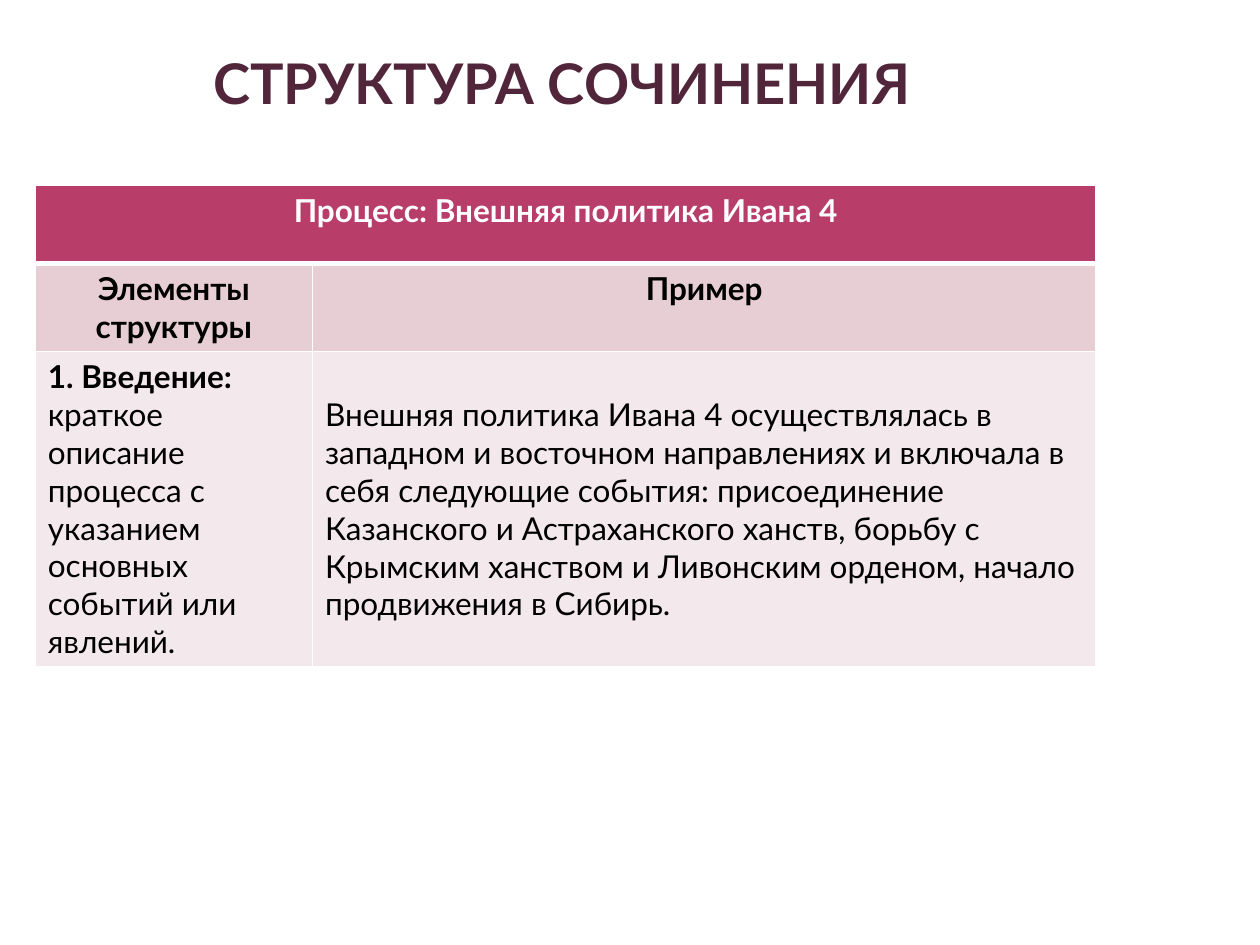
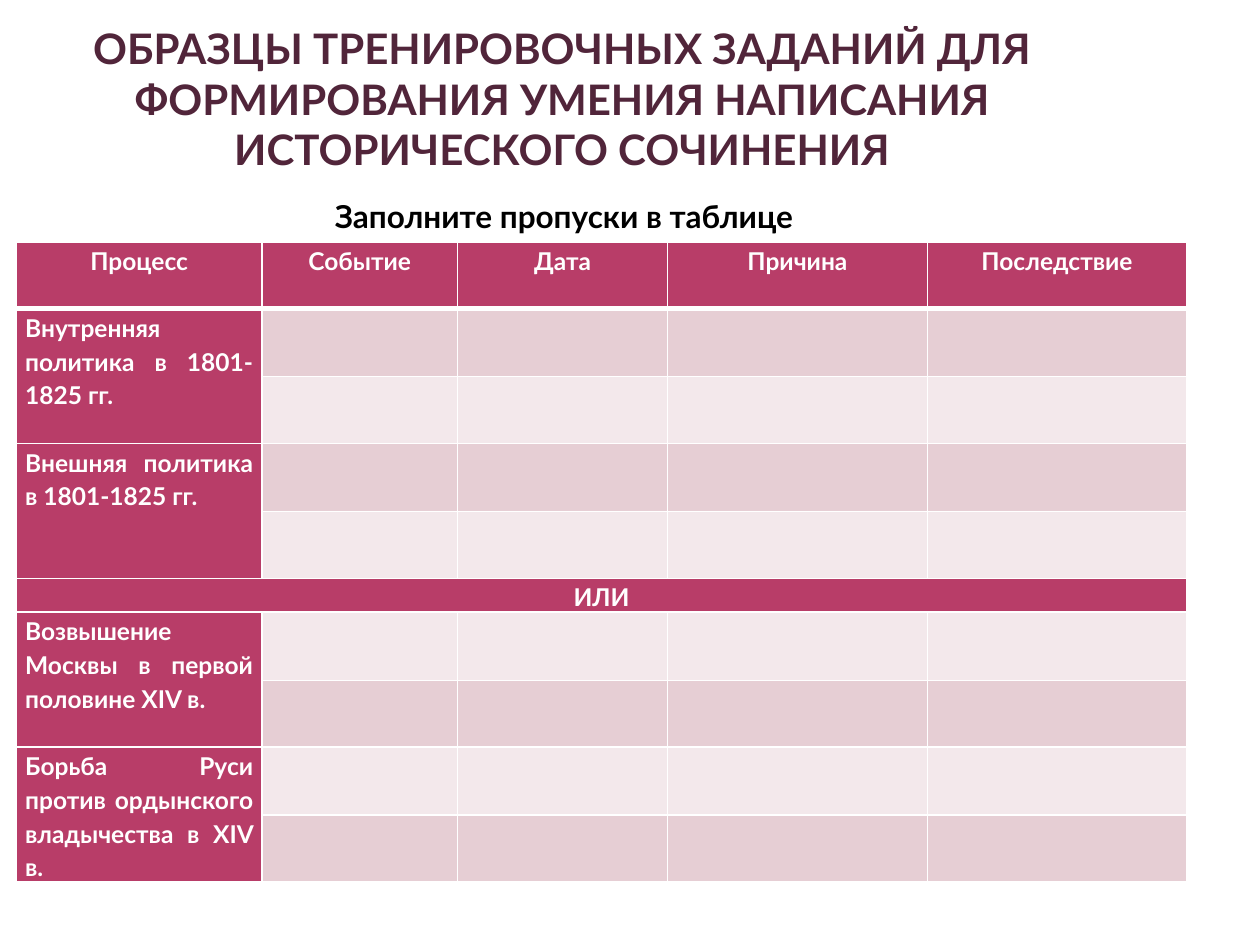
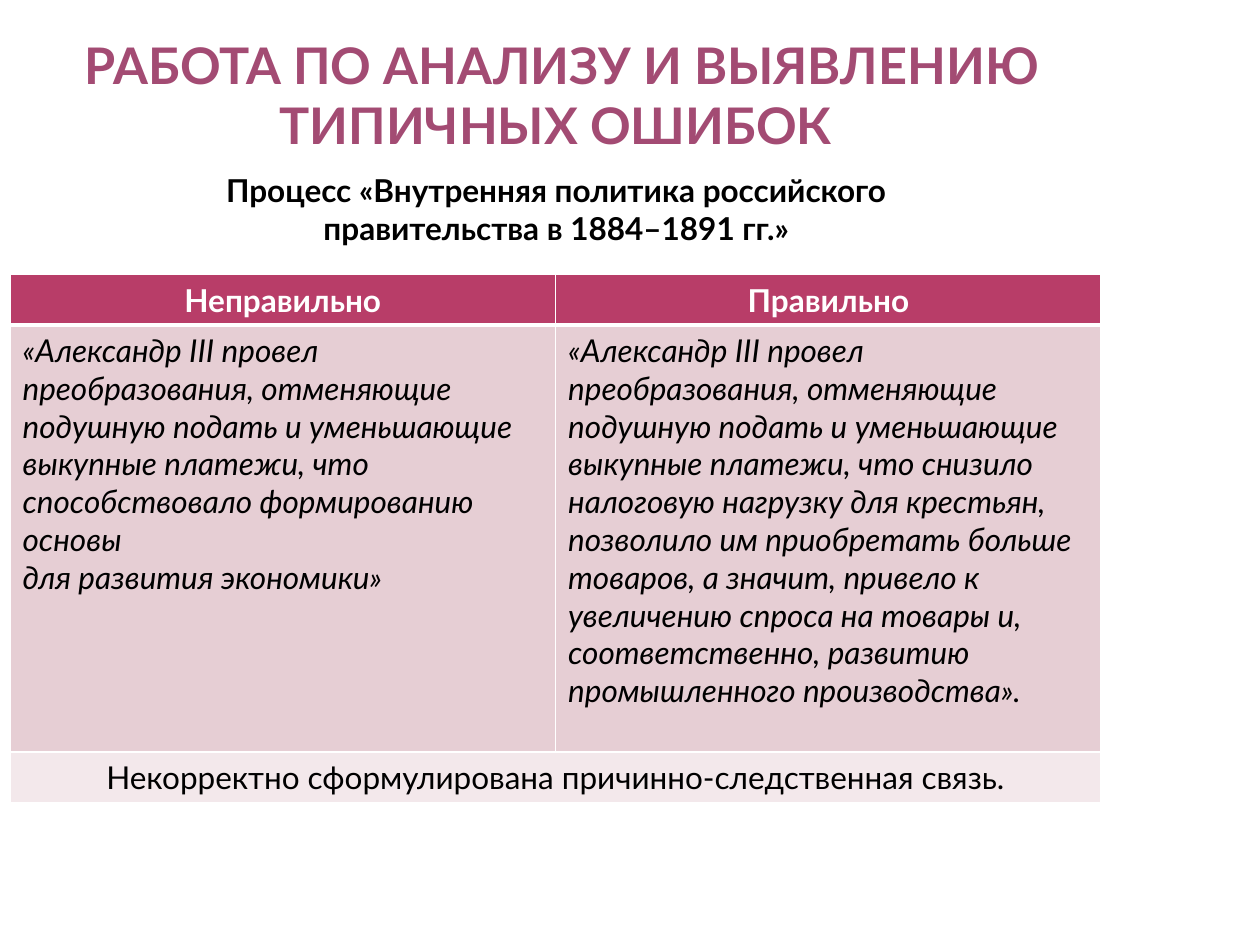
from lxml import etree
from pptx import Presentation as Deck
from pptx.dml.color import RGBColor as Rgb
from pptx.enum.text import MSO_ANCHOR as Anchor, PP_ALIGN as Align
from pptx.oxml.ns import qn
from pptx.util import Inches, Pt

HUE = {
    "plum": "51253A",
    "mauve": "A34B73",
    "head": "B83D68",
    "dark": "E6CED4",
    "light": "F3E8EB",
    "white": "FFFFFF",
    "black": "000000",
}
FONT = "Lato"


def color(name):
    return Rgb.from_string(HUE[name])


def write(frame, text, size=18, hue="black", bold=False, slant=False,
          align=Align.LEFT, space=None, tail=""):
    para = frame.paragraphs[0]
    para.text = text
    para.alignment = align
    if space:
        para.line_spacing = space
    if tail:
        para.add_run().text = tail
    for run in para.runs:
        font = run.font
        font.name, font.size = FONT, Pt(size)
        font.bold, font.italic = bold, slant
        font.color.rgb = color(hue)
    if tail:
        para.runs[-1].font.bold = False


def label(slide, box, text, **style):
    frame = slide.shapes.add_textbox(*map(Inches, box)).text_frame
    frame.word_wrap = True
    write(frame, text, bold=True, **style)
    return frame


def title(slide, box, text, size, hue="plum"):
    frame = label(slide, box, text, size=size, hue=hue, align=Align.CENTER)
    frame.vertical_anchor = Anchor.BOTTOM
    frame.margin_left = frame.margin_right = Inches(0.05)
    frame.margin_top = frame.margin_bottom = 0


def paint(cell, hue):
    cell.fill.solid()
    cell.fill.fore_color.rgb = color(hue)


def edge(cell, row):
    props = cell._tc.get_or_add_tcPr()
    thick = {(0, "B"), (1, "T")}
    for spot, side in enumerate("LRTB"):
        line = etree.Element(qn(f"a:ln{side}"))
        line.set("w", str(Pt(3 if (row, side) in thick else 1)))
        fill = etree.SubElement(line, qn("a:solidFill"))
        etree.SubElement(fill, qn("a:srgbClr")).set("val", HUE["white"])
        props.insert(spot, line)


def grid(slide, box, cols, rows):
    left, top = box
    size = left, top, sum(cols), sum(rows)
    table = slide.shapes.add_table(
        len(rows), len(cols), *map(Inches, size)).table
    for col, width in zip(table.columns, cols):
        col.width = Inches(width)
    for row, height in zip(table.rows, rows):
        row.height = Inches(height)
    for row in range(len(rows)):
        for col in range(len(cols)):
            cell = table.cell(row, col)
            paint(cell, "head" if row == 0 else "dark" if row % 2 else "light")
            edge(cell, row)
    return table


def join(table, first, last):
    table.cell(*first).merge(table.cell(*last))


def plan(slide, box):
    table = grid(slide, box, [2.2, 6.22], [0.62, 0.7, 2.5])
    join(table, (0, 0), (0, 1))
    write(table.cell(0, 0).text_frame, "Процесс: Внешняя политика Ивана 4",
          hue="white", bold=True, align=Align.CENTER)
    for col, text in enumerate(["Элементы структуры", "Пример"]):
        write(table.cell(1, col).text_frame, text,
              bold=True, align=Align.CENTER)
    write(table.cell(2, 0).text_frame, "1. Введение: ", bold=True,
          tail="краткое описание процесса с указанием основных событий "
               "или явлений.")
    sample = table.cell(2, 1)
    sample.vertical_anchor = Anchor.MIDDLE
    write(sample.text_frame,
          "Внешняя политика Ивана 4 осуществлялась в западном и восточном "
          "направлениях и включала в себя следующие события: присоединение "
          "Казанского и Астраханского ханств, борьбу с Крымским ханством и "
          "Ливонским орденом, начало продвижения в Сибирь.")


def drill(slide, box):
    pair = [0.54, 0.53]
    rows = [0.53] + pair * 2 + [0.27] + pair * 2
    table = grid(slide, box, [1.95, 1.55, 1.67, 2.06, 2.06], rows)

    def fill(row, col, text, align):
        cell = table.cell(row, col)
        paint(cell, "head")
        cell.margin_left = cell.margin_right = Inches(0.07)
        cell.margin_top = cell.margin_bottom = 0
        write(cell.text_frame, text, size=14, hue="white", bold=True,
              align=align, space=1.15)

    heads = ["Процесс", "Событие", "Дата", "Причина", "Последствие"]
    for col, text in enumerate(heads):
        fill(0, col, text, Align.CENTER)
    topics = {
        1: "Внутренняя политика в 1801-1825 гг.",
        3: "Внешняя политика в 1801-1825 гг.",
        6: "Возвышение Москвы в первой половине XIV в.",
        8: "Борьба Руси против ордынского владычества в XIV в.",
    }
    for row, text in topics.items():
        join(table, (row, 0), (row + 1, 0))
        fill(row, 0, text, Align.JUSTIFY)
    join(table, (5, 0), (5, 4))
    fill(5, 0, "ИЛИ", Align.CENTER)


def errors(slide, box):
    table = grid(slide, box, [4.33, 4.33], [0.4, 3.39, 0.4])
    start = ("«Александр III провел преобразования, отменяющие подушную "
             "подать и уменьшающие выкупные платежи, что ")
    pairs = [
        ("Неправильно",
         "способствовало формированию основы\vдля развития экономики»"),
        ("Правильно",
         "снизило налоговую нагрузку для крестьян, позволило им приобретать "
         "больше товаров, а значит, привело к увеличению спроса на товары и, "
         "соответственно, развитию промышленного производства»."),
    ]
    for col, (head, end) in enumerate(pairs):
        write(table.cell(0, col).text_frame, head, hue="white", bold=True,
              align=Align.CENTER)
        write(table.cell(1, col).text_frame, start + end, slant=True)
    join(table, (2, 0), (2, 1))
    write(table.cell(2, 0).text_frame,
          "Некорректно сформулирована причинно-следственная связь.",
          align=Align.CENTER)


def main():
    deck = Deck()
    deck.slide_width, deck.slide_height = Inches(10), Inches(7.5)
    one, two, three = [deck.slides.add_slide(deck.slide_layouts[6])
                       for _ in range(3)]

    title(one, (0.5, 0.35, 7.92, 0.57), "СТРУКТУРА СОЧИНЕНИЯ", 32)
    plan(one, (0.28, 1.47))

    title(two, (0.5, 0.2, 7.92, 1.18),
          "ОБРАЗЦЫ ТРЕНИРОВОЧНЫХ ЗАДАНИЙ ДЛЯ ФОРМИРОВАНИЯ УМЕНИЯ НАПИСАНИЯ "
          "ИСТОРИЧЕСКОГО СОЧИНЕНИЯ", 24)
    label(two, (2.56, 1.47, 4.44, 0.45), "Заполните пропуски в таблице",
          align=Align.JUSTIFY, space=1.15)
    drill(two, (0.13, 1.92))

    title(three, (0.5, 0.35, 7.92, 0.88),
          "РАБОТА ПО АНАЛИЗУ И ВЫЯВЛЕНИЮ ТИПИЧНЫХ ОШИБОК ", 28.8, "mauve")
    errors(three, (0.08, 2.18))
    label(three, (0.91, 1.31, 7.01, 0.71),
          "Процесс «Внутренняя политика российского правительства "
          "в 1884–1891 гг.»", align=Align.CENTER)

    deck.save("out.pptx")


if __name__ == "__main__":
    main()
